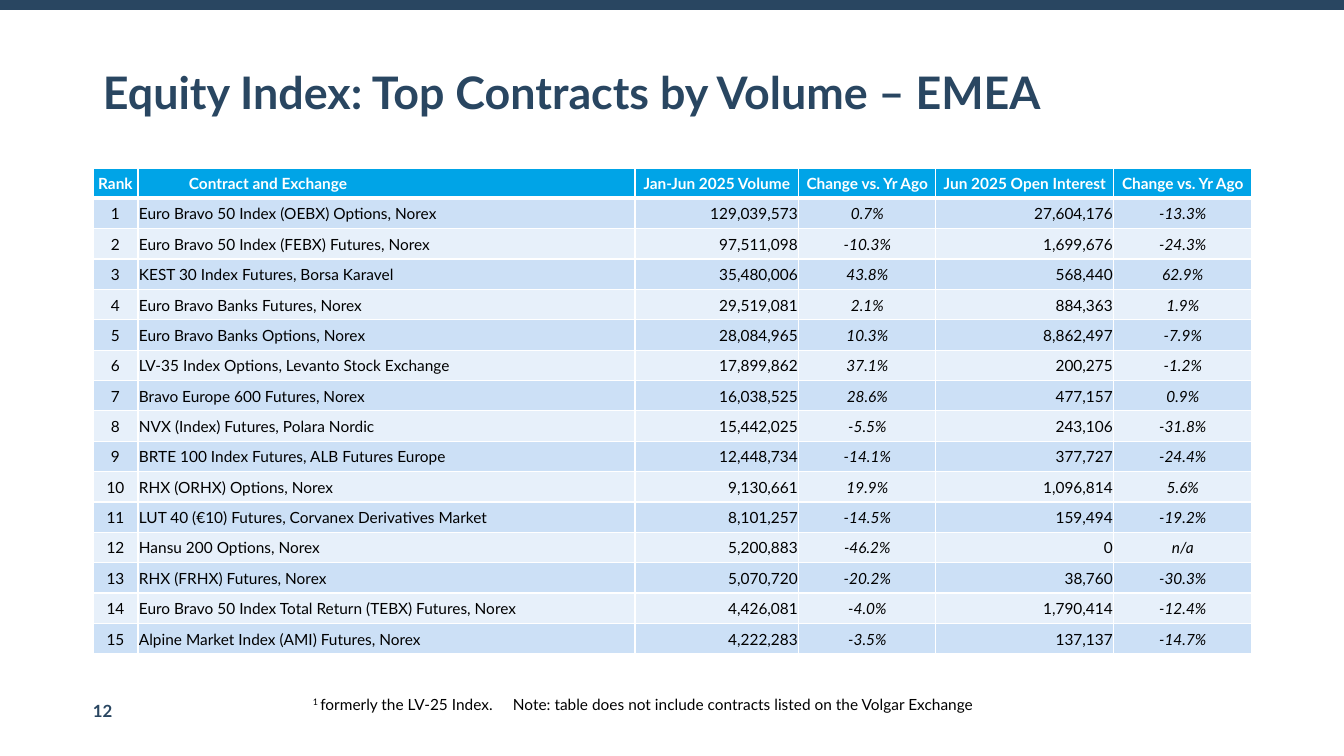
from pptx import Presentation
from pptx.dml.color import RGBColor
from pptx.enum.shapes import MSO_CONNECTOR
from pptx.enum.text import MSO_ANCHOR, MSO_AUTO_SIZE, PP_ALIGN
from pptx.oxml.ns import qn
from pptx.util import Pt
from lxml import etree

LEFT, CENTER, RIGHT = PP_ALIGN.LEFT, PP_ALIGN.CENTER, PP_ALIGN.RIGHT
MIDDLE, BOTTOM = MSO_ANCHOR.MIDDLE, MSO_ANCHOR.BOTTOM
FIT_SHAPE = MSO_AUTO_SIZE.SHAPE_TO_FIT_TEXT
STRAIGHT = MSO_CONNECTOR.STRAIGHT

EMU_PER_PX = 914400 / 100.8
PAGE_WIDTH, PAGE_HEIGHT = 1344, 756
FONT = "Lato"
NAVY, BLUE, WHITE, BLACK = "294661", "00A4E7", "FFFFFF", "000000"
BANDS = ("CCE0F6", "E7F0FA")

COLUMN_WIDTHS = (45, 497, 164, 137, 178, 138)
ALIGNMENTS = (CENTER, LEFT, RIGHT, CENTER, RIGHT, CENTER)
ITALIC_COLUMNS = (3, 5)
HEADERS = ("Rank", "Contract and Exchange", "Jan-Jun 2025 Volume",
           "Change vs. Yr Ago", "Jun 2025 Open Interest", "Change vs. Yr Ago")
# Contract, volume, change, open interest, change; rank follows the order
CONTRACTS = (
    ("Euro Bravo 50 Index (OEBX) Options, Norex", "129,039,573", "0.7%", "27,604,176", "-13.3%"),
    ("Euro Bravo 50 Index (FEBX) Futures, Norex", "97,511,098", "-10.3%", "1,699,676", "-24.3%"),
    ("KEST 30 Index Futures, Borsa Karavel", "35,480,006", "43.8%", "568,440", "62.9%"),
    ("Euro Bravo Banks Futures, Norex", "29,519,081", "2.1%", "884,363", "1.9%"),
    ("Euro Bravo Banks Options, Norex", "28,084,965", "10.3%", "8,862,497", "-7.9%"),
    ("LV-35 Index Options, Levanto Stock Exchange", "17,899,862", "37.1%", "200,275", "-1.2%"),
    ("Bravo Europe 600 Futures, Norex", "16,038,525", "28.6%", "477,157", "0.9%"),
    ("NVX (Index) Futures, Polara Nordic", "15,442,025", "-5.5%", "243,106", "-31.8%"),
    ("BRTE 100 Index Futures, ALB Futures Europe", "12,448,734", "-14.1%", "377,727", "-24.4%"),
    ("RHX (ORHX) Options, Norex", "9,130,661", "19.9%", "1,096,814", "5.6%"),
    ("LUT 40 (€10) Futures, Corvanex Derivatives Market", "8,101,257", "-14.5%", "159,494", "-19.2%"),
    ("Hansu 200 Options, Norex", "5,200,883", "-46.2%", "0", "n/a"),
    ("RHX (FRHX) Futures, Norex", "5,070,720", "-20.2%", "38,760", "-30.3%"),
    ("Euro Bravo 50 Index Total Return (TEBX) Futures, Norex", "4,426,081", "-4.0%", "1,790,414", "-12.4%"),
    ("Alpine Market Index (AMI) Futures, Norex", "4,222,283", "-3.5%", "137,137", "-14.7%"),
)


def px(length):
    return round(length * EMU_PER_PX)


def color(value):
    return RGBColor.from_string(value)


def style(paragraph, size, ink, bold=False, italic=False):
    font = paragraph.font
    font.name, font.size, font.bold, font.italic = FONT, Pt(size), bold, italic
    font.color.rgb = color(ink)


def add_text_box(page, box, anchor=None):
    frame = page.shapes.add_textbox(*map(px, box)).text_frame
    frame.word_wrap = True
    if anchor is not None:
        frame.vertical_anchor = anchor
    return frame


def add_top_bar(page, y):
    bar = page.shapes.add_connector(STRAIGHT, 0, px(y), px(PAGE_WIDTH), px(y))
    bar.line.color.rgb = color(NAVY)
    bar.line.width = Pt(7.75)
    etree.SubElement(bar._element.spPr, qn("a:effectLst"))


def add_title(page, box):
    para = add_text_box(page, box, MIDDLE).paragraphs[0]
    para.text = "Equity Index: Top Contracts by Volume – EMEA"
    para.line_spacing = 0.9
    style(para, 32, NAVY, bold=True)


def add_page_number(page, box):
    frame = add_text_box(page, box, BOTTOM)
    frame.margin_left = frame.margin_right = frame.margin_top = frame.margin_bottom = 0
    frame.word_wrap = False
    frame.auto_size = FIT_SHAPE
    para = frame.paragraphs[0]
    para.text = "12"
    style(para, 12, NAVY, bold=True)


def set_borders(cell, top, bottom):
    properties = cell._tc.get_or_add_tcPr()
    for side, points in (("L", 1), ("R", 1), ("T", top), ("B", bottom)):
        line = etree.SubElement(properties, qn(f"a:ln{side}"), w=str(Pt(points)))
        fill = etree.SubElement(line, qn("a:solidFill"))
        etree.SubElement(fill, qn("a:srgbClr"), val=WHITE)


def fill_cell(cell, text, row, column):
    header = row == 0
    set_borders(cell, top=3 if row == 1 else 1, bottom=3 if header else 1)
    cell.fill.solid()
    cell.fill.fore_color.rgb = color(BLUE if header else BANDS[(row - 1) % 2])
    cell.margin_left = cell.margin_right = cell.margin_top = px(1)
    cell.margin_bottom = 0
    cell.vertical_anchor = MIDDLE
    para = cell.text_frame.paragraphs[0]
    para.text = text
    para.alignment = CENTER if header and column != 1 else ALIGNMENTS[column]
    if header and column == 1:
        para.level = 1
        properties = para._p.get_or_add_pPr()
        properties.set("marL", str(px(50)))
        properties.set("indent", "0")
    style(para, 11, WHITE if header else BLACK, bold=header,
          italic=not header and column in ITALIC_COLUMNS)


def add_contract_table(page, box):
    rows = [HEADERS]
    rows += [(str(rank), *contract) for rank, contract in enumerate(CONTRACTS, 1)]
    table = page.shapes.add_table(len(rows), len(HEADERS), *map(px, box)).table
    table.horz_banding = False
    for column, width in zip(table.columns, COLUMN_WIDTHS):
        column.width = px(width)
    for r, values in enumerate(rows):
        table.rows[r].height = px(box[3] / len(rows))
        for c, text in enumerate(values):
            fill_cell(table.cell(r, c), text, r, c)


def add_footnote(page, box):
    frame = add_text_box(page, box)
    frame.auto_size = FIT_SHAPE
    para = frame.paragraphs[0]
    tabs = etree.SubElement(para._p.get_or_add_pPr(), qn("a:tabLst"))
    etree.SubElement(tabs, qn("a:tab"), pos=str(px(200)), algn="l")
    style(para, 11, BLACK)
    mark = para.add_run()
    mark.text = "1 "
    mark._r.get_or_add_rPr().set("baseline", "30000")
    note = para.add_run()
    note.text = ("formerly the LV-25 Index.\tNote: table does not include "
                 "contracts listed on the Volgar Exchange")


def main():
    deck = Presentation()
    deck.slide_width, deck.slide_height = px(PAGE_WIDTH), px(PAGE_HEIGHT)
    page = deck.slides.add_slide(deck.slide_layouts[6])
    add_top_bar(page, 5)
    add_page_number(page, (93, 701, 24, 20))
    add_title(page, (93, 22, 1159, 146))
    add_contract_table(page, (93, 168, sum(COLUMN_WIDTHS), 486))
    add_footnote(page, (303, 690, 736, 29))
    deck.save("out.pptx")


if __name__ == "__main__":
    main()
